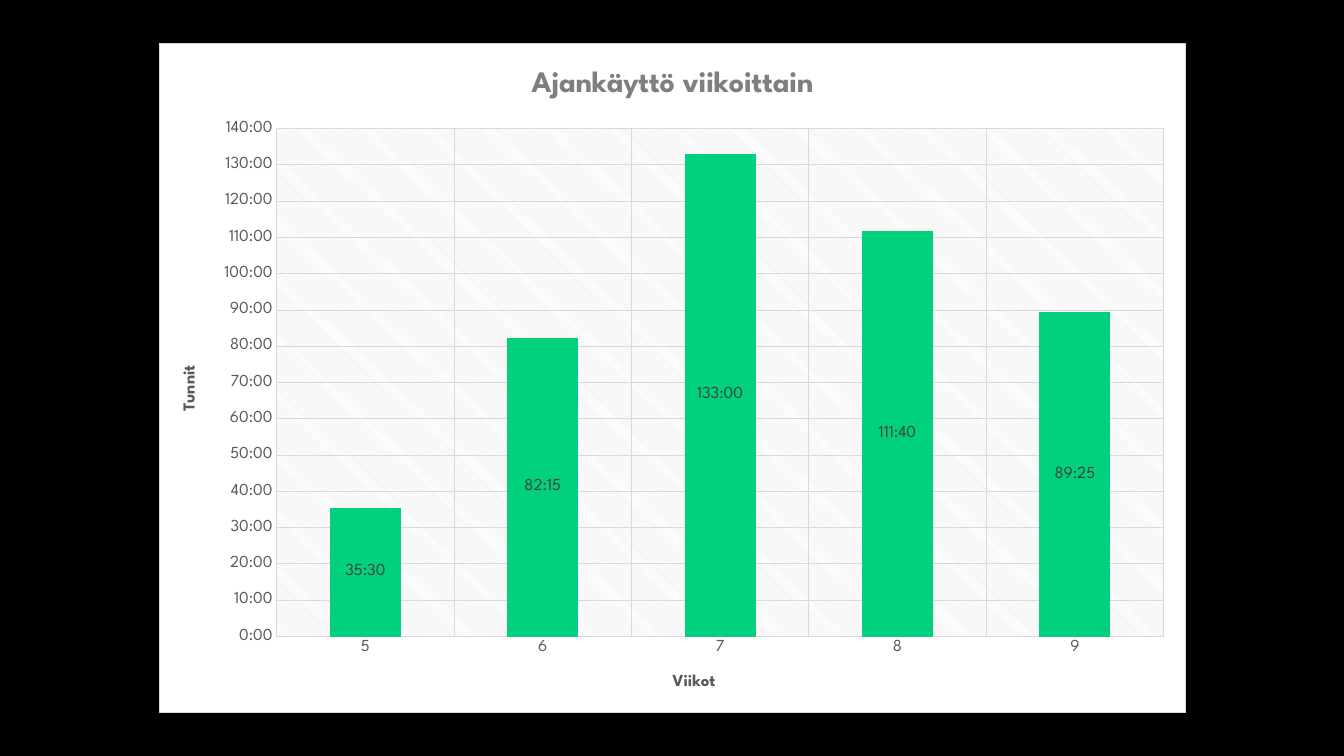
from dataclasses import dataclass

from lxml.etree import _Element
from pptx import Presentation
from pptx.chart.axis import _BaseAxis
from pptx.chart.chart import Chart
from pptx.chart.data import CategoryChartData
from pptx.dml.color import RGBColor
from pptx.enum.chart import XL_CHART_TYPE, XL_LABEL_POSITION, XL_TICK_MARK
from pptx.oxml import parse_xml
from pptx.oxml.ns import nsdecls, qn
from pptx.text.text import Font, TextFrame
from pptx.util import Inches, Pt

BLACK = RGBColor(0x00, 0x00, 0x00)
WHITE = RGBColor(0xFF, 0xFF, 0xFF)
GREEN = RGBColor(0x01, 0xD1, 0x7D)
GRID_GRAY = RGBColor(0xD9, 0xD9, 0xD9)
TITLE_GRAY = RGBColor(0x7F, 0x7F, 0x7F)
AXIS_GRAY = RGBColor(0x59, 0x59, 0x59)
LABEL_GRAY = RGBColor(0x40, 0x40, 0x40)
FONT_NAME = "League Spartan"
TIME_FORMAT = "[h]:mm"
HOURS_PER_DAY = 24


@dataclass(frozen=True)
class Week:
    number: str
    hours: int
    minutes: int

    @property
    def days(self) -> float:
        return round((self.hours + self.minutes / 60) / HOURS_PER_DAY, 4)


WEEKS = [
    Week("5", 35, 30),
    Week("6", 82, 15),
    Week("7", 133, 0),
    Week("8", 111, 40),
    Week("9", 89, 25),
]


def style_font(font: Font, size: float, color: RGBColor, bold: bool = False) -> None:
    font.name = FONT_NAME
    font.size = Pt(size)
    font.bold = bold
    font.color.rgb = color


def write_title(frame: TextFrame, text: str, size: float, color: RGBColor) -> None:
    span = frame.paragraphs[0].add_run()
    span.text = text
    style_font(span.font, size, color, bold=True)


def style_axis(axis: _BaseAxis, title: str) -> None:
    axis.has_title = True
    write_title(axis.axis_title.text_frame, title, 12, AXIS_GRAY)
    axis.major_tick_mark = XL_TICK_MARK.NONE
    axis.minor_tick_mark = XL_TICK_MARK.NONE
    axis.has_major_gridlines = True
    for line in (axis.format.line, axis.major_gridlines.format.line):
        line.color.rgb = GRID_GRAY
        line.width = Pt(0.75)
    style_font(axis.tick_labels.font, 12, AXIS_GRAY)


def plot_layout(left: float, top: float, width: float, height: float) -> _Element:
    return parse_xml(
        f'<c:layout {nsdecls("c")}><c:manualLayout><c:layoutTarget val="inner"/>'
        '<c:xMode val="edge"/><c:yMode val="edge"/>'
        f'<c:x val="{left}"/><c:y val="{top}"/><c:w val="{width}"/><c:h val="{height}"/>'
        "</c:manualLayout></c:layout>"
    )


def fill_backgrounds(chart: Chart) -> None:
    chart_element = chart.element.find(qn("c:chart"))
    chart_element.addnext(parse_xml(
        f'<c:spPr {nsdecls("c", "a")}>'
        f'<a:solidFill><a:srgbClr val="{WHITE}"/></a:solidFill>'
        f'<a:ln w="{Pt(0.75)}"><a:solidFill><a:srgbClr val="{GRID_GRAY}"/></a:solidFill></a:ln>'
        "</c:spPr>"
    ))
    plot_area = chart_element.find(qn("c:plotArea"))
    for layout in plot_area.findall(qn("c:layout")):
        plot_area.remove(layout)
    plot_area.insert(0, plot_layout(0.114, 0.127, 0.865, 0.76))
    plot_area.append(parse_xml(
        f'<c:spPr {nsdecls("c", "a")}><a:pattFill prst="ltDnDiag">'
        f'<a:fgClr><a:srgbClr val="{GRID_GRAY}"/></a:fgClr>'
        f'<a:bgClr><a:srgbClr val="{WHITE}"/></a:bgClr>'
        "</a:pattFill><a:ln><a:noFill/></a:ln></c:spPr>"
    ))


def style_columns(chart: Chart) -> None:
    plot = chart.plots[0]
    plot.vary_by_categories = False
    plot.gap_width = 150
    plot.overlap = 100
    series = plot.series[0]
    series.format.fill.solid()
    series.format.fill.fore_color.rgb = GREEN
    labels = series.data_labels
    labels.show_value = True
    labels.number_format = TIME_FORMAT
    labels.number_format_is_linked = False
    labels.position = XL_LABEL_POSITION.CENTER
    style_font(labels.font, 12, LABEL_GRAY)


def main() -> None:
    deck = Presentation()
    deck.slide_width = Inches(13.33)
    deck.slide_height = Inches(7.5)
    page = deck.slides.add_slide(deck.slide_layouts[6])
    page.background.fill.solid()
    page.background.fill.fore_color.rgb = BLACK

    data = CategoryChartData(number_format=TIME_FORMAT)
    data.categories = [week.number for week in WEEKS]
    data.add_series("Series 1", [week.days for week in WEEKS])
    chart = page.shapes.add_chart(
        XL_CHART_TYPE.COLUMN_STACKED,
        Inches(1.58), Inches(0.43), Inches(10.18), Inches(6.64), data,
    ).chart
    style_font(chart.font, 10, WHITE)
    chart.has_legend = False
    chart.has_title = True
    write_title(chart.chart_title.text_frame, "Ajankäyttö viikoittain", 21.3, TITLE_GRAY)
    chart.chart_title.include_in_layout = False

    style_axis(chart.category_axis, "Viikot")
    style_axis(chart.value_axis, "Tunnit")
    chart.value_axis.minimum_scale = 0
    chart.value_axis.maximum_scale = 140 / HOURS_PER_DAY
    chart.value_axis.major_unit = 10 / HOURS_PER_DAY
    chart.value_axis.tick_labels.number_format = TIME_FORMAT
    chart.value_axis.tick_labels.number_format_is_linked = False
    style_columns(chart)
    fill_backgrounds(chart)
    deck.save("out.pptx")


if __name__ == "__main__":
    main()
